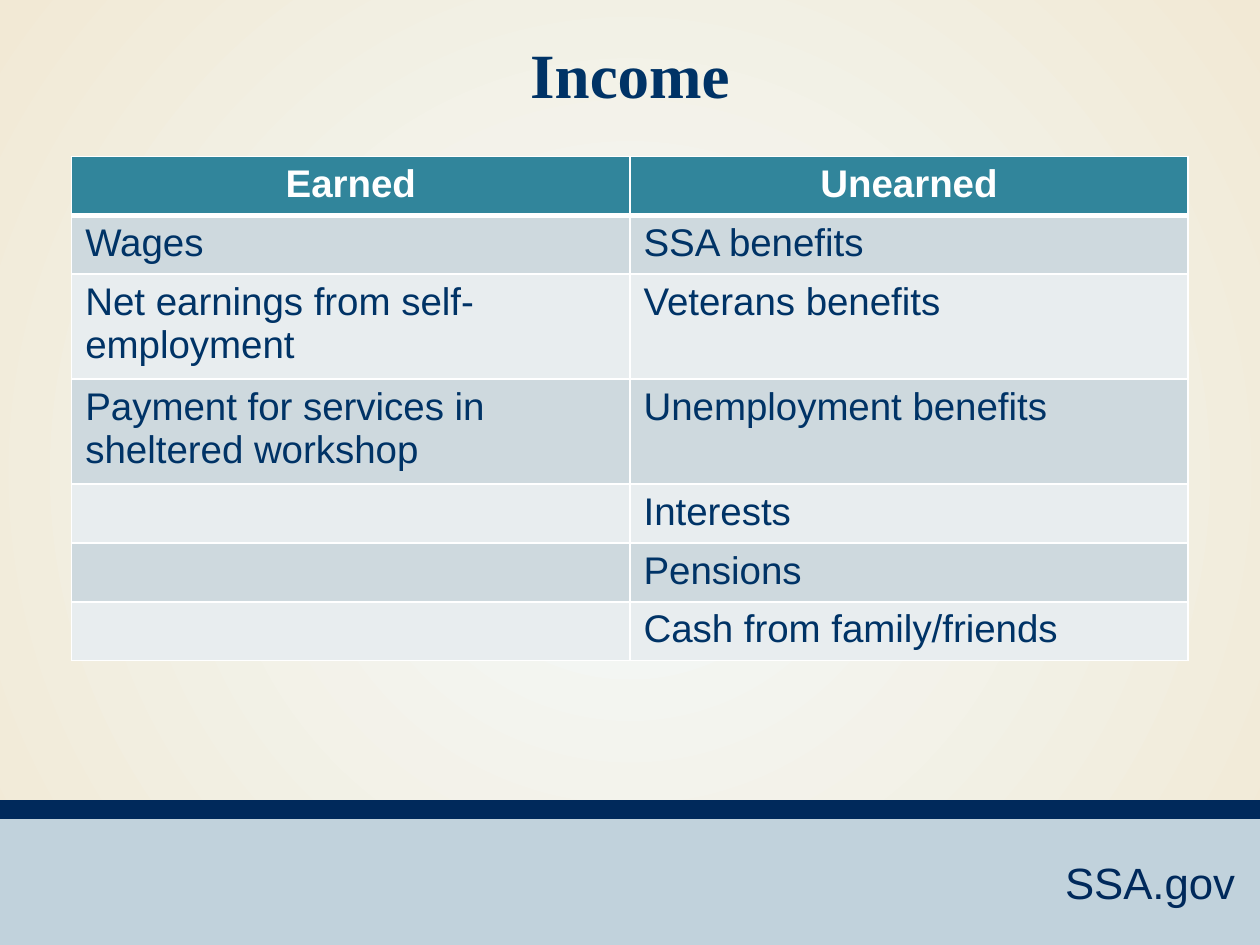
from lxml import etree
from pptx import Presentation
from pptx.dml.color import RGBColor
from pptx.enum.shapes import MSO_SHAPE
from pptx.enum.text import MSO_ANCHOR, PP_ALIGN
from pptx.oxml.ns import qn
from pptx.util import Pt

RECTANGLE = MSO_SHAPE.RECTANGLE
MIDDLE = MSO_ANCHOR.MIDDLE
LEFT, CENTER, RIGHT = PP_ALIGN.LEFT, PP_ALIGN.CENTER, PP_ALIGN.RIGHT

TITLE_ONLY = 5
WIDTH, HEIGHT = 720, 540
NAVY, TEXT_BLUE, WHITE = "00295B", "003366", "FFFFFF"
HEADER_FILL = "31859B"
BAND_FILLS = ("CED9DE", "E8EDEF")
ROWS = [
    ("Earned", "Unearned"),
    ("Wages", "SSA benefits"),
    ("Net earnings from self-employment", "Veterans benefits"),
    ("Payment for services in sheltered workshop", "Unemployment benefits"),
    ("", "Interests"),
    ("", "Pensions"),
    ("", "Cash from family/friends"),
]


def color(value):
    return RGBColor.from_string(value)


def format_text(text_frame, size, text_color, font="Arial", bold=False, align=LEFT):
    for paragraph in text_frame.paragraphs:
        paragraph.alignment = align
        for run in paragraph.runs:
            run.font.name = font
            run.font.size = Pt(size)
            run.font.bold = bold
            run.font.color.rgb = color(text_color)


def set_background(slide, center_color, edge_color):
    fill = slide.background.fill
    fill.gradient()
    for stop, value in zip(fill.gradient_stops, (center_color, edge_color)):
        stop.color.rgb = color(value)
    # Turn the linear gradient into a circular one
    linear = slide.element.find(".//" + qn("a:lin"))
    circle = etree.Element(qn("a:path"), path="circle")
    etree.SubElement(circle, qn("a:fillToRect"), l="50000", t="50000", r="50000", b="50000")
    linear.getparent().replace(linear, circle)


def add_band(slide, top, height, fill):
    shape = slide.shapes.add_shape(RECTANGLE, 0, Pt(top), Pt(WIDTH), Pt(height))
    shape.shadow.inherit = False
    shape.fill.solid()
    shape.fill.fore_color.rgb = color(fill)
    shape.line.fill.background()


def add_footer_text(slide, text):
    box = slide.shapes.add_textbox(Pt(491.8), Pt(485.3), Pt(221), Pt(37.4))
    box.text_frame.word_wrap = True
    box.text_frame.text = text
    format_text(box.text_frame, 25, NAVY, align=RIGHT)


def set_title(slide, text):
    title = slide.shapes.title
    title.left, title.top, title.width, title.height = Pt(36), Pt(16.6), Pt(648), Pt(51)
    title.text_frame.text = text
    title.text_frame.vertical_anchor = MIDDLE
    format_text(title.text_frame, 36, TEXT_BLUE, "Times New Roman", True, CENTER)


def set_borders(cell, top=1, bottom=1):
    properties = cell._tc.get_or_add_tcPr()
    sides = (("a:lnL", 1), ("a:lnR", 1), ("a:lnT", top), ("a:lnB", bottom))
    for index, (tag, width) in enumerate(sides):
        line = etree.Element(qn(tag), w=str(Pt(width)))
        fill = etree.SubElement(line, qn("a:solidFill"))
        etree.SubElement(fill, qn("a:srgbClr"), val=WHITE)
        properties.insert(index, line)


def add_income_table(slide, rows):
    row_height = 29.2
    frame = slide.shapes.add_table(
        len(rows), 2, Pt(41), Pt(89.4), Pt(638), Pt(row_height * len(rows))
    )
    table = frame.table
    for row_index, texts in enumerate(rows):
        header = row_index == 0
        table.rows[row_index].height = Pt(row_height)
        for column_index, text in enumerate(texts):
            cell = table.cell(row_index, column_index)
            cell.margin_left = cell.margin_right = Pt(7.8)
            cell.fill.solid()
            fill = HEADER_FILL if header else BAND_FILLS[(row_index - 1) % 2]
            cell.fill.fore_color.rgb = color(fill)
            set_borders(cell, top=3 if row_index == 1 else 1, bottom=3 if header else 1)
            if text:
                cell.text_frame.text = text
                format_text(
                    cell.text_frame,
                    22,
                    WHITE if header else TEXT_BLUE,
                    bold=header,
                    align=CENTER if header else LEFT,
                )


def main():
    presentation = Presentation()
    presentation.slide_width, presentation.slide_height = Pt(WIDTH), Pt(HEIGHT)
    slide = presentation.slides.add_slide(presentation.slide_layouts[TITLE_ONLY])
    set_background(slide, "F3FAFB", "F2E9D5")

    # Footer
    add_band(slide, 464.4, 76, "C1D2DC")
    add_band(slide, 457.2, 10.8, NAVY)
    add_footer_text(slide, "SSA.gov")

    # Title and table
    set_title(slide, "Income")
    add_income_table(slide, ROWS)

    presentation.save("out.pptx")


if __name__ == "__main__":
    main()
